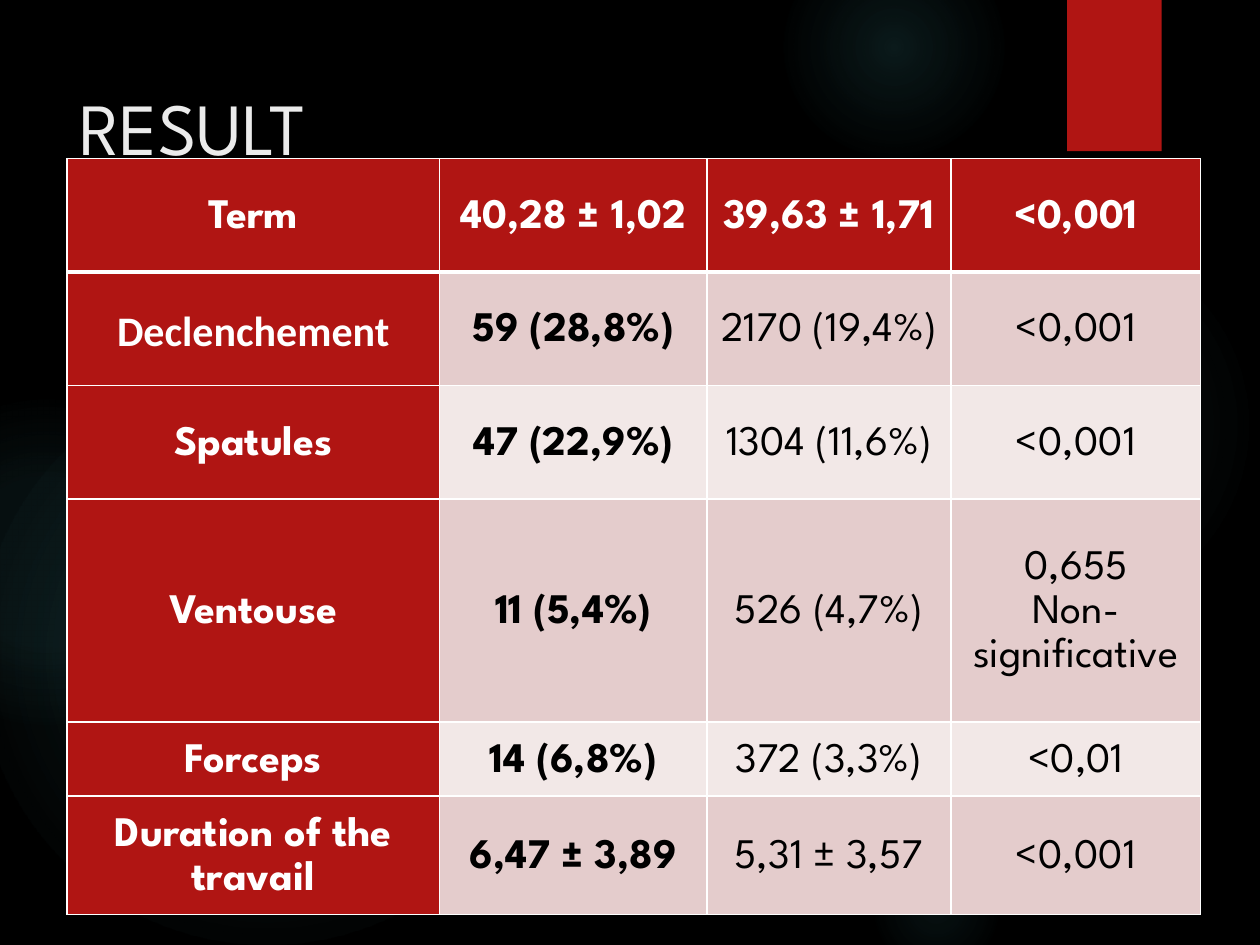
from lxml.etree import SubElement
from pptx import Presentation
from pptx.dml.color import RGBColor
from pptx.enum.shapes import MSO_SHAPE
from pptx.enum.text import MSO_ANCHOR, PP_ALIGN
from pptx.oxml import parse_xml
from pptx.oxml.ns import nsdecls, qn
from pptx.util import Inches, Pt

COLORS = {
    "background": "000000",
    "glow": "50B9C1",
    "red": "B01513",
    "title": "EBEBEB",
    "white": "FFFFFF",
    "black": "000000",
    "band_dark": "E4CCCC",
    "band_light": "F2E8E7",
}
FONT = "League Spartan"

# Left, top, diameter, then (position %, opacity %) stops
GLOWS = [
    (6.89, 1.83, 3.08, [(0, 7), (36, 6), (69, 0)]),
    (6.22, -0.5, 1.75, [(0, 14), (36, 7), (73, 0)]),
    (6.89, 6.67, 1.08, [(0, 9), (36, 5), (66, 0)]),
    (-0.17, 2.92, 4.58, [(0, 11), (36, 10), (75, 0)]),
    (-0.92, 3.17, 2.58, [(0, 8), (36, 8), (72, 0)]),
]

COL_WIDTHS = [2.96, 2.12, 1.94, 1.98]
ROW_HEIGHTS = [0.9, 0.9, 0.9, 1.77, 0.59, 0.87]
ROWS = [
    ["Term", "40,28 ± 1,02", "39,63 ± 1,71", "<0,001"],
    ["Declenchement", "59 (28,8%)", "2170 (19,4%)", "<0,001"],
    ["Spatules", "47 (22,9%)", "1304 (11,6%)", "<0,001"],
    ["Ventouse", "11 (5,4%)", "526 (4,7%)", "0,655\nNon-significative"],
    ["Forceps", "14 (6,8%)", "372 (3,3%)", "<0,01"],
    ["Duration of the travail", "6,47 ± 3,89", "5,31 ± 3,57", "<0,001"],
]


def rgb(name):
    return RGBColor.from_string(COLORS[name])


def write_text(tf, text, size=24, color="black", font=FONT, bold=False,
               align=PP_ALIGN.LEFT, spacing=None):
    """Write each line of text as one formatted paragraph."""
    tf.word_wrap = True
    for i, line in enumerate(text.split("\n")):
        p = tf.add_paragraph() if i else tf.paragraphs[0]
        p.alignment = align
        p.line_spacing = spacing
        r = p.add_run()
        r.text = line
        r.font.size = Pt(size)
        r.font.name = font
        r.font.bold = bold
        r.font.color.rgb = rgb(color)


def add_shape(s, kind, left, top, width, height):
    sp = s.shapes.add_shape(kind, Inches(left), Inches(top),
                            Inches(width), Inches(height))
    sp.shadow.inherit = False
    sp.line.fill.background()
    return sp


def add_glow(s, left, top, size, stops):
    """Add a circle that fades out from its centre."""
    sp = add_shape(s, MSO_SHAPE.OVAL, left, top, size, size)
    gs = "".join(
        f'<a:gs pos="{pos * 1000}"><a:srgbClr val="{COLORS["glow"]}">'
        f'<a:alpha val="{alpha * 1000}"/></a:srgbClr></a:gs>'
        for pos, alpha in stops)
    grad = parse_xml(
        f'<a:gradFill {nsdecls("a")} rotWithShape="1"><a:gsLst>{gs}</a:gsLst>'
        '<a:path path="circle"><a:fillToRect l="50000" t="50000" r="50000" '
        'b="50000"/></a:path></a:gradFill>')
    sp.element.spPr.find(qn("a:prstGeom")).addnext(grad)


def add_title(s, text):
    tb = s.shapes.add_textbox(Inches(0.53), Inches(0.5),
                              Inches(7.72), Inches(1))
    tb.text_frame.vertical_anchor = MSO_ANCHOR.MIDDLE
    write_text(tb.text_frame, text, size=42, color="title")


def set_borders(cell, **widths):
    tc_pr = cell._tc.get_or_add_tcPr()
    for side in ("L", "R", "T", "B"):
        ln = SubElement(tc_pr, qn(f"a:ln{side}"),
                        w=str(Pt(widths.get(side, 1))))
        fill = SubElement(ln, qn("a:solidFill"))
        SubElement(fill, qn("a:srgbClr"), val=COLORS["white"])


def format_cell(cell, text, row, col):
    cell.margin_left = cell.margin_right = Inches(0.07)
    cell.margin_top = cell.margin_bottom = Inches(0.01)
    cell.vertical_anchor = MSO_ANCHOR.MIDDLE
    # A thick rule separates the first row from the rest
    set_borders(cell, T=3 if row == 1 else 1, B=3 if row == 0 else 1)
    heading = row == 0 or col == 0
    band = "band_dark" if row % 2 else "band_light"
    cell.fill.solid()
    cell.fill.fore_color.rgb = rgb("red" if heading else band)
    write_text(cell.text_frame, text,
               color="white" if heading else "black",
               font="Calibri" if text == "Declenchement" else FONT,
               bold=heading or col == 1,
               align=PP_ALIGN.CENTER, spacing=1.15)


def add_result_table(s):
    table = s.shapes.add_table(
        len(ROWS), len(COL_WIDTHS), Inches(0.53), Inches(1.26),
        Inches(sum(COL_WIDTHS)), Inches(sum(ROW_HEIGHTS))).table
    for column, width in zip(table.columns, COL_WIDTHS):
        column.width = Inches(width)
    for row, height in zip(table.rows, ROW_HEIGHTS):
        row.height = Inches(height)
    for i, values in enumerate(ROWS):
        for j, text in enumerate(values):
            format_cell(table.cell(i, j), text, i, j)


def main():
    prs = Presentation()
    prs.slide_width, prs.slide_height = Inches(10), Inches(7.5)
    s = prs.slides.add_slide(prs.slide_layouts[6])

    # Background with soft glows and the red tab
    s.background.fill.solid()
    s.background.fill.fore_color.rgb = rgb("background")
    for glow in GLOWS:
        add_glow(s, *glow)
    tab = add_shape(s, MSO_SHAPE.RECTANGLE, 8.47, 0, 0.75, 1.2)
    tab.fill.solid()
    tab.fill.fore_color.rgb = rgb("red")

    # Content
    add_title(s, "RESULT")
    add_result_table(s)
    prs.save("out.pptx")


if __name__ == "__main__":
    main()
